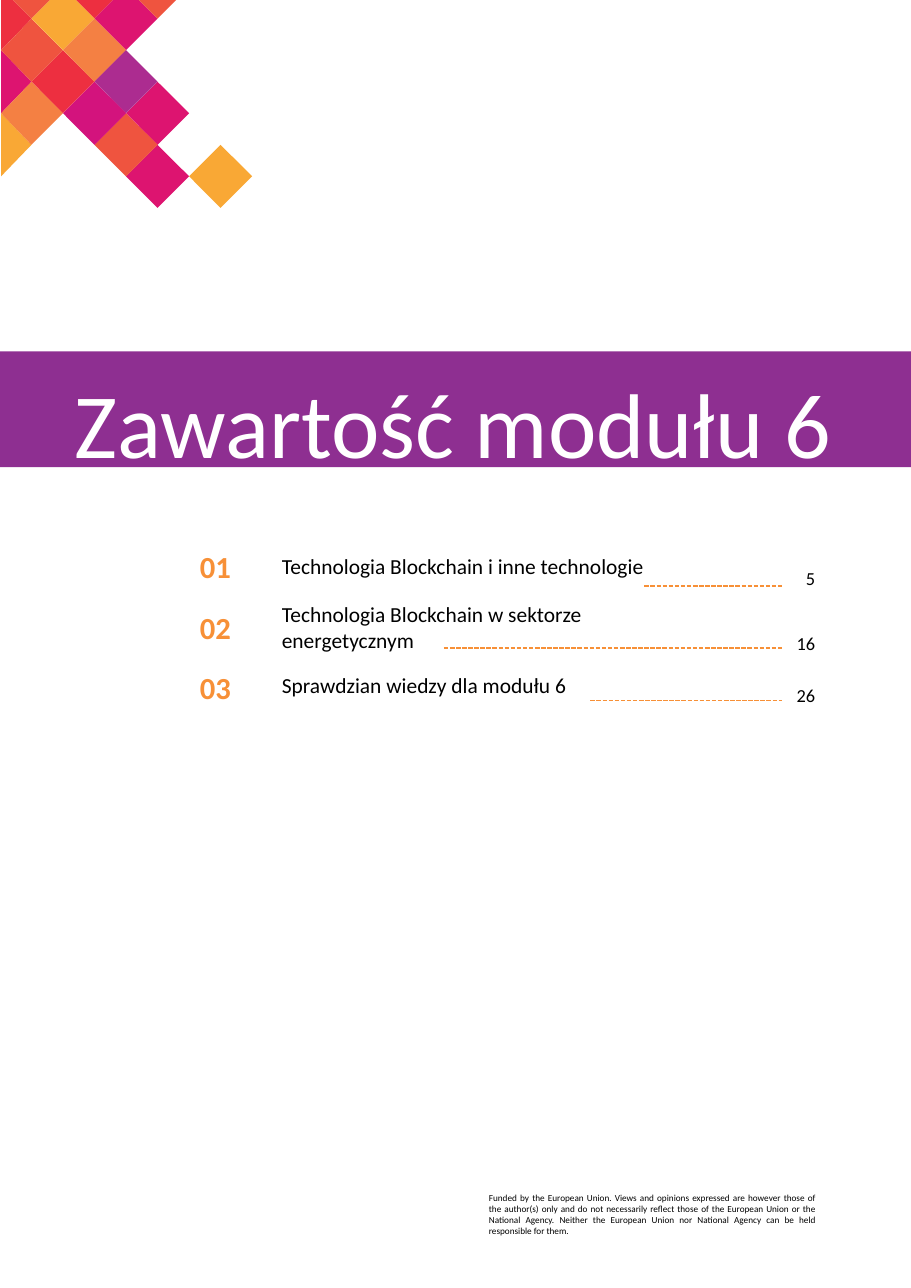
from lxml import etree
from pptx import Presentation
from pptx.dml.color import RGBColor
from pptx.enum.dml import MSO_LINE
from pptx.enum.shapes import MSO_CONNECTOR, MSO_SHAPE
from pptx.enum.text import MSO_ANCHOR, MSO_AUTO_SIZE, PP_ALIGN
from pptx.oxml.ns import qn
from pptx.util import Inches, Pt

LEFT, CENTER, RIGHT, JUSTIFY = PP_ALIGN.LEFT, PP_ALIGN.CENTER, PP_ALIGN.RIGHT, PP_ALIGN.JUSTIFY
TOP, MIDDLE = MSO_ANCHOR.TOP, MSO_ANCHOR.MIDDLE
PAGE_W, PAGE_H = 8.27, 11.69
BLACK, WHITE, ORANGE, PURPLE = "000000", "FFFFFF", "F79037", "8E2F91"


def rgb(value):
    return RGBColor.from_string(value)


def write(holder, box, text, size, color=BLACK, align=LEFT, anchor=MIDDLE, bold=False):
    """Place a text holder at box (inches) and fill it with one formatted run."""
    holder.left, holder.top, holder.width, holder.height = (Inches(v) for v in box)
    frame = holder.text_frame
    frame.word_wrap = True
    frame.auto_size = MSO_AUTO_SIZE.NONE
    frame.vertical_anchor = anchor
    paragraph = frame.paragraphs[0]
    paragraph.alignment = align
    run = paragraph.add_run()
    run.text = text
    run.font.name, run.font.size, run.font.bold = "Calibri", Pt(size), bold
    run.font.color.rgb = rgb(color)


deck = Presentation()
deck.slide_width, deck.slide_height = Inches(PAGE_W), Inches(PAGE_H)
slide = deck.slides.add_slide(deck.slide_layouts[5])
shapes = slide.shapes

# Title on its band; the band goes behind the title placeholder
band = shapes.add_shape(MSO_SHAPE.RECTANGLE, 0, Inches(3.19), Inches(PAGE_W), Inches(1.05))
band.shadow.inherit = False
band.fill.solid()
band.fill.fore_color.rgb = rgb(PURPLE)
band.line.fill.background()
shapes._spTree.insert(2, band._element)

write(shapes.title, (0.58, 3.24, 7.25, 1.06), "Zawartość modułu 6", 60, WHITE, anchor=TOP)
shapes.title.text_frame.margin_top = Inches(0.09)

# Corner mosaic: diamonds on a lattice, cut at the left and top edges
HALF = 0.286
ROW_ZERO = 0.17
EDGE_X, EDGE_Y = 0.01, -0.04
mosaic = {  # colour: (column, row) of each diamond's centre
    "ED2F40": [(3, -1), (2, 2), (0, 0)],
    "DD1470": [(4, 0), (0, 2), (5, 5), (5, 3)],
    "EF543F": [(5, -1), (1, 1), (4, 4), (1, -1)],
    "F9A835": [(2, 0), (0, 4), (7, 5)],
    "F48043": [(3, 1), (1, 3)],
    "AC2C90": [(4, 2)],
    "D3137D": [(3, 3)],
}
for color, centres in mosaic.items():
    for column, row in centres:
        x, y = column * HALF, ROW_ZERO + row * HALF
        top = max(y - HALF, EDGE_Y)
        cut = HALF - abs(y - top)
        corners = [(x - cut, top), (x + cut, top)]
        corners += [p for p in ((x + HALF, y), (x, y + HALF), (x - HALF, y)) if p[1] > top]
        outline = [(Inches(max(px, EDGE_X)), Inches(py)) for px, py in corners]
        builder = shapes.build_freeform(*outline[0])
        builder.add_line_segments(outline[1:], close=True)
        diamond = builder.convert_to_shape()
        diamond.shadow.inherit = False
        diamond.fill.solid()
        diamond.fill.fore_color.rgb = rgb(color)
        diamond.line.fill.background()

# Table of contents
FIRST_ROW, ROW_STEP, ROW_H = 4.95, 0.55, 0.38
LEADER_END = 7.1
chapters = [  # text, text top, text width, page, page top, leader start, leader height
    ("Technologia Blockchain i inne technologie", 4.95, 4.35, "5", 5.06, 5.85, 5.32),
    ("Technologia Blockchain w sektorze energetycznym", 5.5, 3.88, "16", 5.65, 4.03, 5.88),
    ("Sprawdzian wiedzy dla modułu 6", 6.03, 3.88, "26", 6.12, 5.36, 6.36),
]
for index, (chapter, text_top, text_w, page, page_top, start, leader_y) in enumerate(chapters):
    row_top = FIRST_ROW + index * ROW_STEP
    cells = [
        ((1.6, row_top, 0.71, ROW_H), f"{index + 1:02d}", 20, ORANGE, CENTER, MIDDLE, True),
        ((2.46, text_top, text_w, ROW_H), chapter, 14),
        ((7, page_top, 0.5, ROW_H), page, 12, BLACK, RIGHT),
    ]
    for cell in cells:
        write(shapes.add_textbox(0, 0, 0, 0), *cell)
    leader = shapes.add_connector(MSO_CONNECTOR.STRAIGHT, Inches(start), Inches(leader_y),
                                  Inches(LEADER_END), Inches(leader_y))
    leader.line.color.rgb = rgb(ORANGE)
    leader.line.width = Pt(1)
    leader.line.dash_style = MSO_LINE.SQUARE_DOT
    etree.SubElement(leader._element.spPr, qn("a:effectLst"))

# Funding note
write(shapes.add_textbox(0, 0, 0, 0), (4.34, 10.77, 3.16, 0.5),
      "Funded by the European Union. Views and opinions expressed are however those of the "
      "author(s) only and do not necessarily reflect those of the European Union or the National "
      "Agency. Neither the European Union nor National Agency can be held responsible for them.",
      6, align=JUSTIFY, anchor=TOP)

deck.save("out.pptx")
